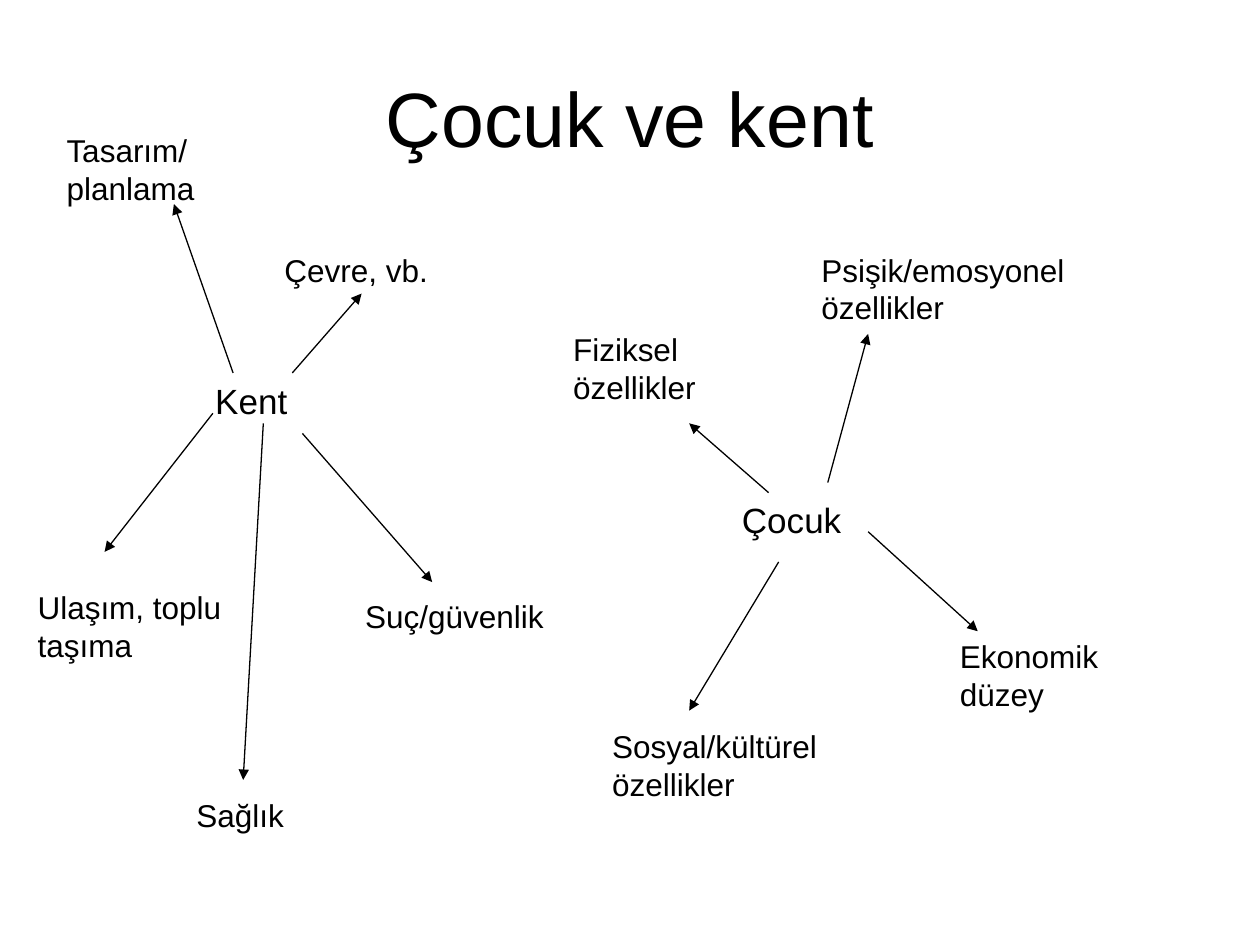
from dataclasses import dataclass

import pptx
import pptx.dml.color
import pptx.enum.dml
import pptx.enum.shapes
import pptx.enum.text
import pptx.oxml
import pptx.oxml.ns
import pptx.util
from pptx.util import Inches


@dataclass(frozen=True)
class Theme:
    font: str = "Arial"
    ink: pptx.dml.color.RGBColor = pptx.dml.color.RGBColor(0, 0, 0)
    title: int = 44
    hub: int = 20
    label: int = 18
    line: float = 0.75


THEME = Theme()

HUBS = [
    ("Kent", 1.61, 2.96, 2.05, 0.43),
    ("Çocuk", 5.79, 3.91, 1.81, 0.43),
]

LABELS = [
    ("Tasarım/planlama", 0.43, 0.99, 1.73, 0.7),
    ("Ulaşım, toplu taşıma", 0.2, 4.62, 2.13, 0.7),
    ("Sağlık", 1.46, 6.27, 2.2, 0.4),
    ("Suç/güvenlik", 2.8, 4.69, 1.73, 0.4),
    ("Çevre, vb.", 2.16, 1.94, 1.97, 0.4),
    ("Fiziksel özellikler", 4.45, 2.57, 1.58, 0.7),
    ("Psişik/emosyonel özellikler", 6.42, 1.94, 2.6, 0.7),
    ("Sosyal/kültürel özellikler", 4.76, 5.72, 2.05, 0.7),
    ("Ekonomik düzey", 7.52, 5.01, 1.89, 0.7),
]

ARROWS = [
    (1.85, 2.96, 1.38, 1.62),
    (1.69, 3.28, 0.83, 4.38),
    (2.09, 3.36, 1.93, 6.19),
    (2.4, 3.44, 3.43, 4.62),
    (2.32, 2.96, 2.87, 2.33),
    (6.1, 3.91, 5.47, 3.36),
    (6.57, 3.83, 6.89, 2.65),
    (6.89, 4.22, 7.76, 5.01),
    (6.18, 4.46, 5.47, 5.64),
]


def format_text(p, size, align):
    p.alignment = align
    p.font.name = THEME.font
    p.font.size = pptx.util.Pt(size)
    p.font.color.rgb = THEME.ink


def set_title(s, text):
    sp = s.shapes.title
    sp.left, sp.top = Inches(0.5), Inches(0.3)
    sp.width, sp.height = Inches(9), Inches(1.25)
    tf = sp.text_frame
    tf.text = text
    tf.vertical_anchor = pptx.enum.text.MSO_ANCHOR.MIDDLE
    format_text(tf.paragraphs[0], THEME.title, pptx.enum.text.PP_ALIGN.CENTER)


def add_label(s, text, box, size):
    sp = s.shapes.add_textbox(*map(Inches, box))
    tf = sp.text_frame
    tf.word_wrap = True
    tf.auto_size = pptx.enum.text.MSO_AUTO_SIZE.SHAPE_TO_FIT_TEXT
    tf.text = text
    format_text(tf.paragraphs[0], size, pptx.enum.text.PP_ALIGN.LEFT)


def add_arrow(s, ends):
    cx = s.shapes.add_connector(
        pptx.enum.shapes.MSO_CONNECTOR.STRAIGHT, *map(Inches, ends))
    cx.line.color.rgb = THEME.ink
    cx.line.width = pptx.util.Pt(THEME.line)
    ns = pptx.oxml.ns.nsdecls("a")
    cx.line._get_or_add_ln().append(
        pptx.oxml.parse_xml(f'<a:tailEnd {ns} type="triangle"/>'))
    cx._element.spPr.append(pptx.oxml.parse_xml(f"<a:effectLst {ns}/>"))


def main():
    prs = pptx.Presentation()
    prs.slide_width, prs.slide_height = Inches(10), Inches(7.5)
    s = prs.slides.add_slide(prs.slide_layouts.get_by_name("Title Only"))
    set_title(s, "Çocuk ve kent")
    for ends in ARROWS:
        add_arrow(s, ends)
    for size, items in ((THEME.hub, HUBS), (THEME.label, LABELS)):
        for text, *box in items:
            add_label(s, text, box, size)
    prs.save("out.pptx")


if __name__ == "__main__":
    main()
